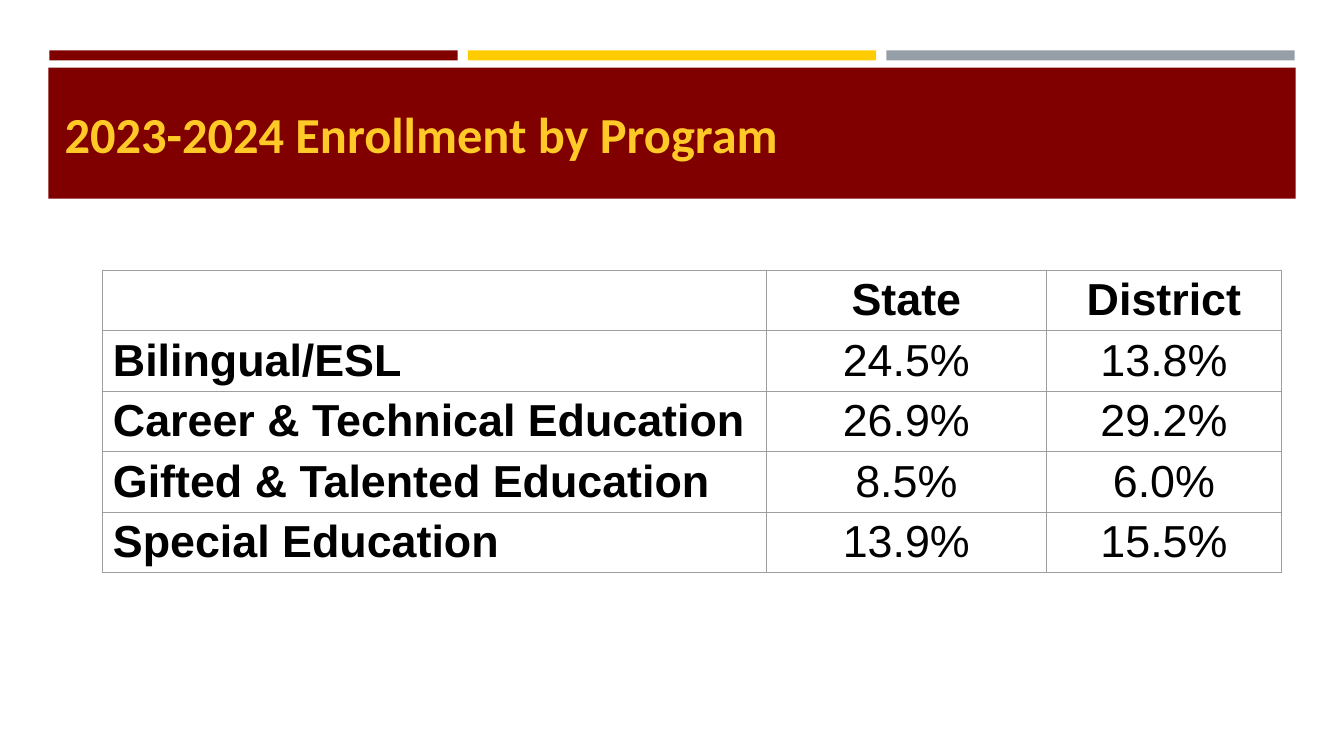
"""Build the enrollment-by-program slide."""
from dataclasses import dataclass

from lxml import etree
from pptx import Presentation
from pptx.dml.color import RGBColor
from pptx.enum.shapes import MSO_SHAPE
from pptx.enum.text import MSO_ANCHOR, MSO_AUTO_SIZE, PP_ALIGN
from pptx.oxml.ns import qn
from pptx.slide import Slide
from pptx.table import _Cell
from pptx.text.text import TextFrame
from pptx.util import Inches, Pt

RECTANGLE = MSO_SHAPE.RECTANGLE
MIDDLE = MSO_ANCHOR.MIDDLE
NO_AUTOFIT = MSO_AUTO_SIZE.NONE
LEFT, CENTER = PP_ALIGN.LEFT, PP_ALIGN.CENTER


@dataclass(frozen=True)
class Theme:
    maroon: str = "800000"
    gold: str = "FFCC00"
    gray: str = "969FA7"
    title: str = "FFCA28"
    text: str = "000000"
    paper: str = "FFFFFF"
    border: str = "9E9E9E"
    border_width: float = 0.75
    title_font: str = "Calibri"
    table_font: str = "Arial"
    title_size: int = 36
    table_size: int = 32


@dataclass(frozen=True)
class Bar:
    left: float
    top: float
    width: float
    height: float
    color: str


THEME = Theme()
BARS = [
    Bar(0.49 + 4.15 * i, 0.5, 4.05, 0.1, color)
    for i, color in enumerate((THEME.maroon, THEME.gold, THEME.gray))
] + [Bar(0.48, 0.67, 12.37, 1.3, THEME.maroon)]
TITLE = "2023-2024 Enrollment by Program"
COLUMN_WIDTHS = (6.58, 2.78, 2.33)
ROW_HEIGHT = 0.6
ENROLLMENT = [
    ("", "State", "District"),
    ("Bilingual/ESL", "24.5%", "13.8%"),
    ("Career & Technical Education", "26.9%", "29.2%"),
    ("Gifted & Talented Education", "8.5%", "6.0%"),
    ("Special Education", "13.9%", "15.5%"),
]


def add_bar(s: Slide, bar: Bar) -> None:
    box = (Inches(v) for v in (bar.left, bar.top, bar.width, bar.height))
    sp = s.shapes.add_shape(RECTANGLE, *box)
    sp.shadow.inherit = False
    sp.fill.solid()
    sp.fill.fore_color.rgb = RGBColor.from_string(bar.color)
    sp.line.fill.background()


def write(tf: TextFrame, text: str, font: str, size: int, color: str,
          bold: bool, align: PP_ALIGN) -> None:
    p = tf.paragraphs[0]
    p.alignment = align
    r = p.add_run()
    r.text = text
    r.font.name = font
    r.font.size = Pt(size)
    r.font.bold = bold
    r.font.color.rgb = RGBColor.from_string(color)


def add_title(s: Slide) -> None:
    sp = s.shapes.title
    sp.left, sp.top = Inches(0.64), Inches(0.77)
    sp.width, sp.height = Inches(12.06), Inches(1.11)
    tf = sp.text_frame
    tf.margin_left = tf.margin_right = tf.margin_top = tf.margin_bottom = 0
    tf.vertical_anchor = MIDDLE
    tf.word_wrap = True
    tf.auto_size = NO_AUTOFIT
    write(tf, TITLE, THEME.title_font, THEME.title_size, THEME.title, True, LEFT)


def add_borders(cell: _Cell) -> None:
    tc_pr = cell._tc.get_or_add_tcPr()
    for i, side in enumerate(("a:lnL", "a:lnR", "a:lnT", "a:lnB")):
        ln = etree.Element(qn(side), w=str(Pt(THEME.border_width)))
        fill = etree.SubElement(ln, qn("a:solidFill"))
        etree.SubElement(fill, qn("a:srgbClr"), val=THEME.border)
        tc_pr.insert(i, ln)


def add_enrollment_table(s: Slide) -> None:
    rows, cols = len(ENROLLMENT), len(COLUMN_WIDTHS)
    table = s.shapes.add_table(
        rows, cols, Inches(1.02), Inches(2.68),
        Inches(sum(COLUMN_WIDTHS)), Inches(ROW_HEIGHT * rows)).table
    for column, width in zip(table.columns, COLUMN_WIDTHS):
        column.width = Inches(width)
    for i, row in enumerate(ENROLLMENT):
        table.rows[i].height = Inches(ROW_HEIGHT)
        for j, text in enumerate(row):
            cell = table.cell(i, j)
            cell.fill.solid()
            cell.fill.fore_color.rgb = RGBColor.from_string(THEME.paper)
            cell.margin_top = cell.margin_bottom = Inches(0.04)
            cell.vertical_anchor = MIDDLE
            add_borders(cell)
            if text:
                write(cell.text_frame, text, THEME.table_font, THEME.table_size,
                      THEME.text, i == 0 or j == 0, CENTER if j else LEFT)


def main() -> None:
    prs = Presentation()
    prs.slide_width, prs.slide_height = Inches(13.33), Inches(7.5)
    s = prs.slides.add_slide(prs.slide_layouts[5])
    for bar in BARS:
        add_bar(s, bar)
    add_title(s)
    title = s.shapes.title._element
    title.getparent().append(title)
    add_enrollment_table(s)
    prs.save("out.pptx")


if __name__ == "__main__":
    main()
